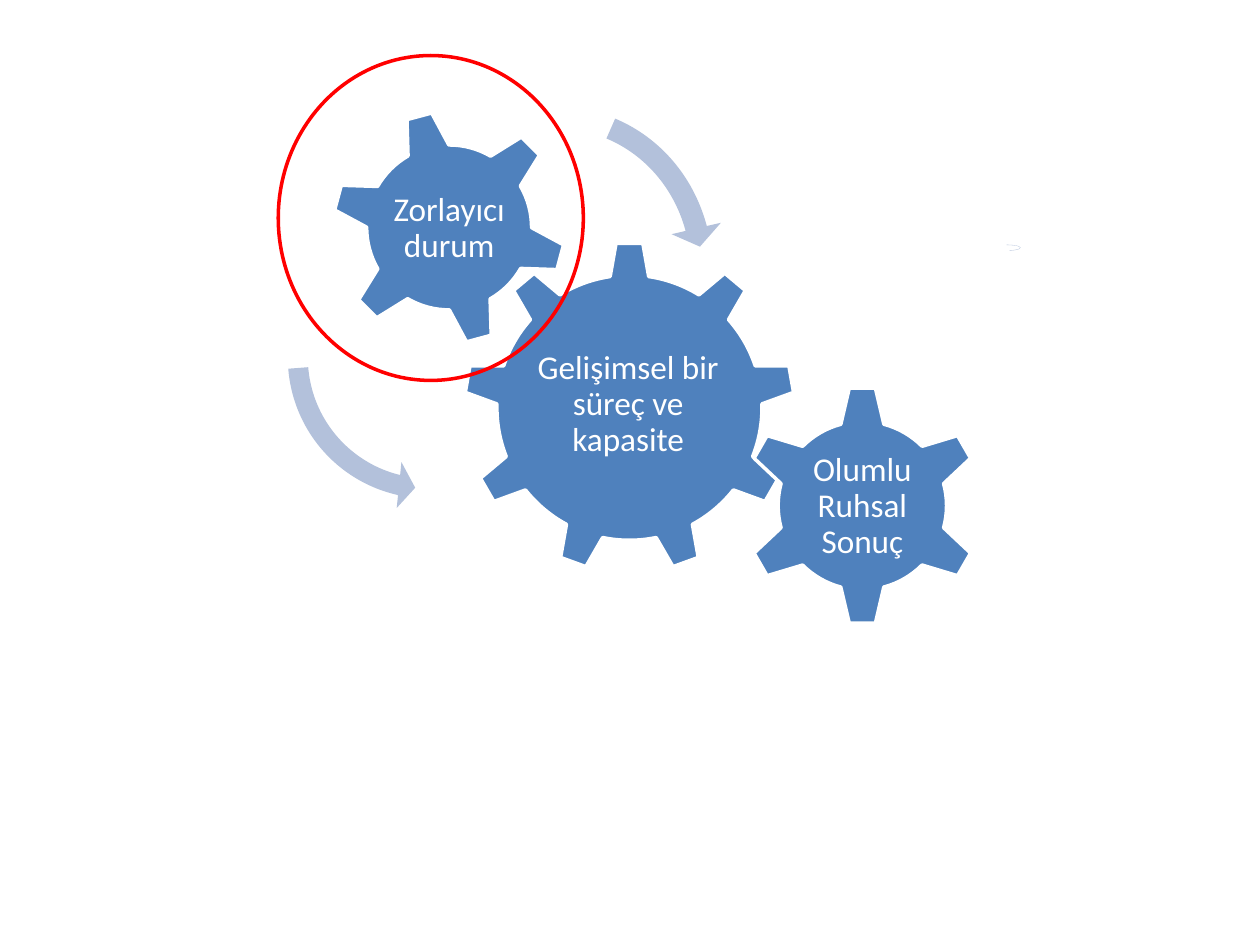
from pptx import Presentation
from pptx.dml.color import RGBColor
from pptx.enum.shapes import MSO_SHAPE
from pptx.enum.text import MSO_ANCHOR, PP_ALIGN
from pptx.util import Cm, Pt

BLUE = RGBColor(0x4F, 0x81, 0xBD)
PALE_BLUE = RGBColor(0xB3, 0xC1, 0xDB)
RED = RGBColor(0xFF, 0x00, 0x00)
WHITE = RGBColor(0xFF, 0xFF, 0xFF)

prs = Presentation()
prs.slide_width, prs.slide_height = Cm(25.4), Cm(19.05)
slide = prs.slides.add_slide(prs.slide_layouts[6])


def add_outline(kind, box, fill=None, line=None, rotation=0):
    shape = slide.shapes.add_shape(kind, *[Cm(length) for length in box])
    shape.shadow.inherit = False
    shape.rotation = rotation
    if fill is None:
        shape.fill.background()
    else:
        shape.fill.solid()
        shape.fill.fore_color.rgb = fill
    if line is None:
        shape.line.fill.background()
    else:
        shape.line.color.rgb = line
        shape.line.width = Pt(2)
    return shape


def add_text(text, box, size=19, color=WHITE, font="Calibri"):
    frame = slide.shapes.add_textbox(*[Cm(length) for length in box]).text_frame
    frame.word_wrap = True
    frame.vertical_anchor = MSO_ANCHOR.MIDDLE
    frame.margin_left = frame.margin_right = Cm(0.08)
    frame.margin_top = frame.margin_bottom = Cm(0.08)
    paragraph = frame.paragraphs[0]
    paragraph.alignment = PP_ALIGN.CENTER
    paragraph.line_spacing = 0.9
    run = paragraph.add_run()
    run.text = text
    run.font.name = font
    run.font.size = Pt(size)
    run.font.color.rgb = color


gears = [
    ("Gelişimsel bir süreç ve kapasite", MSO_SHAPE.GEAR_9,
     (9.35, 4.88, 6.68, 6.68), 0, (10.67, 6.45, 3.99, 3.43)),
    ("Olumlu Ruhsal Sonuç", MSO_SHAPE.GEAR_6,
     (14.96, 7.77, 4.85, 4.85), 0, (16.18, 9.02, 2.41, 2.39)),
    ("Zorlayıcı durum", MSO_SHAPE.GEAR_6,
     (6.68, 2.21, 4.75, 4.75), 345, (7.72, 3.28, 2.67, 2.67)),
]
for label, kind, gear_box, rotation, label_box in gears:
    add_outline(kind, gear_box, fill=BLUE, line=WHITE, rotation=rotation)
    add_text(label, label_box)

turns = [
    (MSO_SHAPE.CIRCULAR_ARROW, (20.02, 4.93, 0.56, 0.13), 0,
     (0.05, 2.99, 25.2, 158.53, 0.06)),
    (MSO_SHAPE.LEFT_CIRCULAR_ARROW, (5.54, 4.11, 6.2, 6.2), 288.2,
     (0.065, 4.3, 104.89, 148.38, 0.075)),
    (MSO_SHAPE.CIRCULAR_ARROW, (7.04, 2.06, 7.82, 7.29), 118.5,
     (0.06, 3.94, 133.14, 105.08, 0.07)),
]
for kind, box, rotation, bends in turns:
    turn = add_outline(kind, box, fill=PALE_BLUE, rotation=rotation)
    for index, bend in enumerate(bends):
        turn.adjustments[index] = bend

add_outline(MSO_SHAPE.FLOWCHART_CONNECTOR, (5.61, 1.12, 6.15, 6.55), line=RED)

prs.save("out.pptx")
